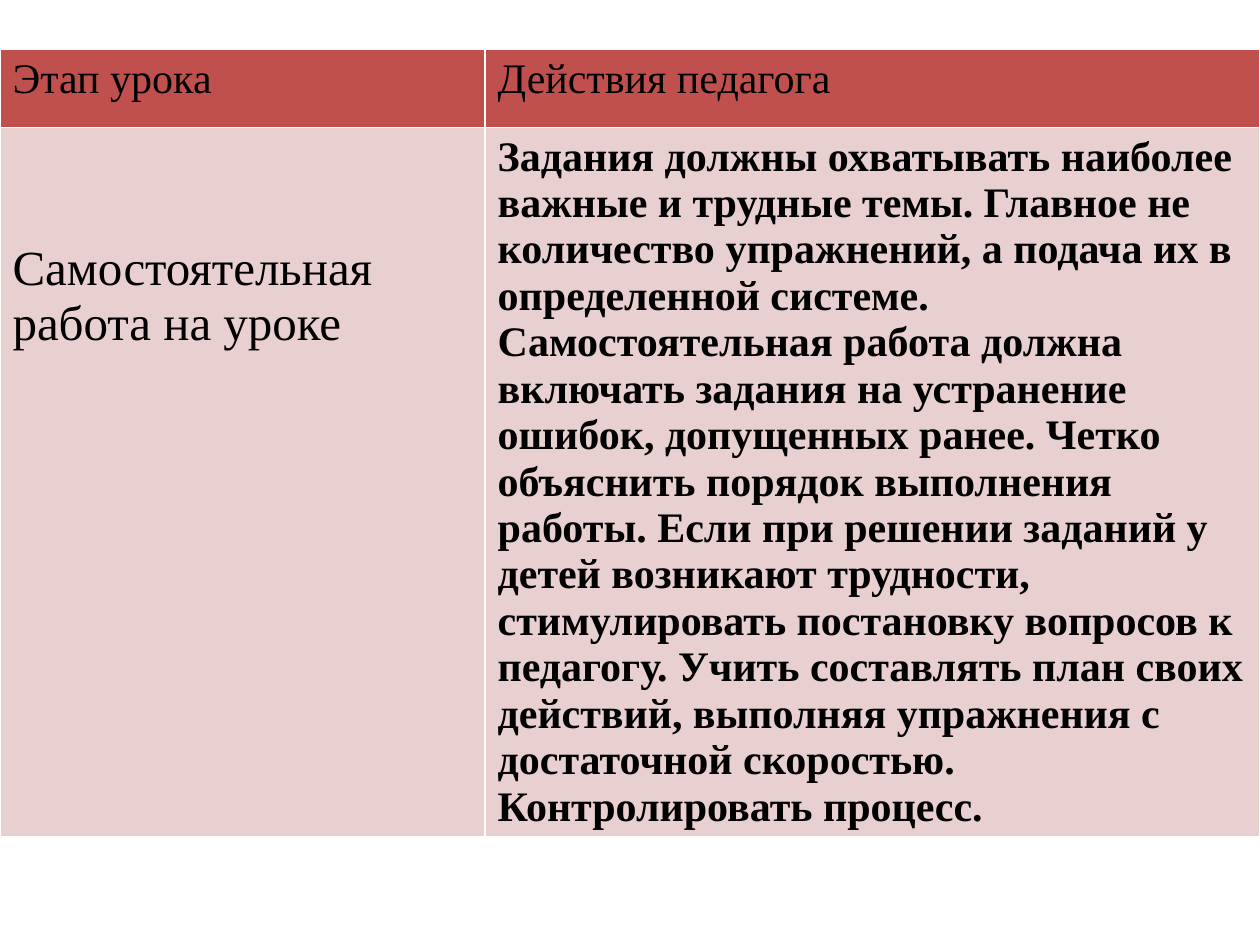
from dataclasses import dataclass

from lxml import etree
from pptx import Presentation
from pptx.dml.color import RGBColor
from pptx.enum.text import MSO_ANCHOR, PP_ALIGN
from pptx.oxml.ns import qn
from pptx.util import Pt

TOP = MSO_ANCHOR.TOP
LEFT = PP_ALIGN.LEFT
BLANK_LAYOUT = 6


@dataclass(frozen=True)
class Theme:
    font: str = "Times New Roman"
    text: str = "000000"
    header: str = "C0504D"
    body: str = "E8D0D0"
    border: str = "FFFFFF"
    border_width: float = 1
    normal_size: float = 24
    stage_size: float = 28


THEME = Theme()
COLUMN_WIDTHS = (277.2, 442.8)
ROW_HEIGHTS = (44.6, 405)
STAGE_TOP_MARGIN = 65.6

HEADER_FORMAT = {"size": Pt(THEME.normal_size), "bold": False}
STAGE_FORMAT = {"size": Pt(THEME.stage_size), "bold": False}
ACTIONS_FORMAT = {"size": Pt(THEME.normal_size), "bold": True}

ACTIONS = (
    "Задания должны охватывать наиболее важные и трудные темы. "
    "Главное не количество упражнений, а подача их в определенной системе. "
    "Самостоятельная работа должна включать задания на устранение ошибок, "
    "допущенных ранее. Четко объяснить порядок выполнения работы. "
    "Если при решении заданий у детей возникают трудности, стимулировать "
    "постановку вопросов к педагогу. Учить составлять план своих действий, "
    "выполняя упражнения с достаточной скоростью. Контролировать процесс."
)

ROWS = (
    (THEME.header, (("Этап урока", HEADER_FORMAT),
                    ("Действия педагога", HEADER_FORMAT))),
    (THEME.body, (("Самостоятельная работа на уроке", STAGE_FORMAT),
                  (ACTIONS, ACTIONS_FORMAT))),
)


def add_borders(cell):
    properties = cell._tc.get_or_add_tcPr()
    for side in ("a:lnL", "a:lnR", "a:lnT", "a:lnB"):
        line = etree.SubElement(properties, qn(side), w=str(Pt(THEME.border_width)))
        fill = etree.SubElement(line, qn("a:solidFill"))
        etree.SubElement(fill, qn("a:srgbClr"), val=THEME.border)


def format_cell(cell, text, fill_color, font_format):
    add_borders(cell)
    cell.fill.solid()
    cell.fill.fore_color.rgb = RGBColor.from_string(fill_color)
    cell.vertical_anchor = TOP
    paragraph = cell.text_frame.paragraphs[0]
    paragraph.alignment = LEFT
    run = paragraph.add_run()
    run.text = text
    for name, value in {"name": THEME.font, **font_format}.items():
        setattr(run.font, name, value)
    run.font.color.rgb = RGBColor.from_string(THEME.text)


def add_lesson_table(slide, left, top, width, height):
    shape = slide.shapes.add_table(
        len(ROWS), len(COLUMN_WIDTHS), Pt(left), Pt(top), Pt(width), Pt(height)
    )
    table = shape.table
    for column, column_width in zip(table.columns, COLUMN_WIDTHS):
        column.width = Pt(column_width)
    for row, row_height, (fill_color, entries) in zip(table.rows, ROW_HEIGHTS, ROWS):
        row.height = Pt(row_height)
        for cell, (text, font_format) in zip(row.cells, entries):
            format_cell(cell, text, fill_color, font_format)
    table.cell(1, 0).margin_top = Pt(STAGE_TOP_MARGIN)


def main():
    presentation = Presentation()
    presentation.slide_width = Pt(720)
    presentation.slide_height = Pt(540)
    slide = presentation.slides.add_slide(presentation.slide_layouts[BLANK_LAYOUT])
    add_lesson_table(slide, 0, 28.2, sum(COLUMN_WIDTHS), sum(ROW_HEIGHTS))
    presentation.save("out.pptx")


if __name__ == "__main__":
    main()
